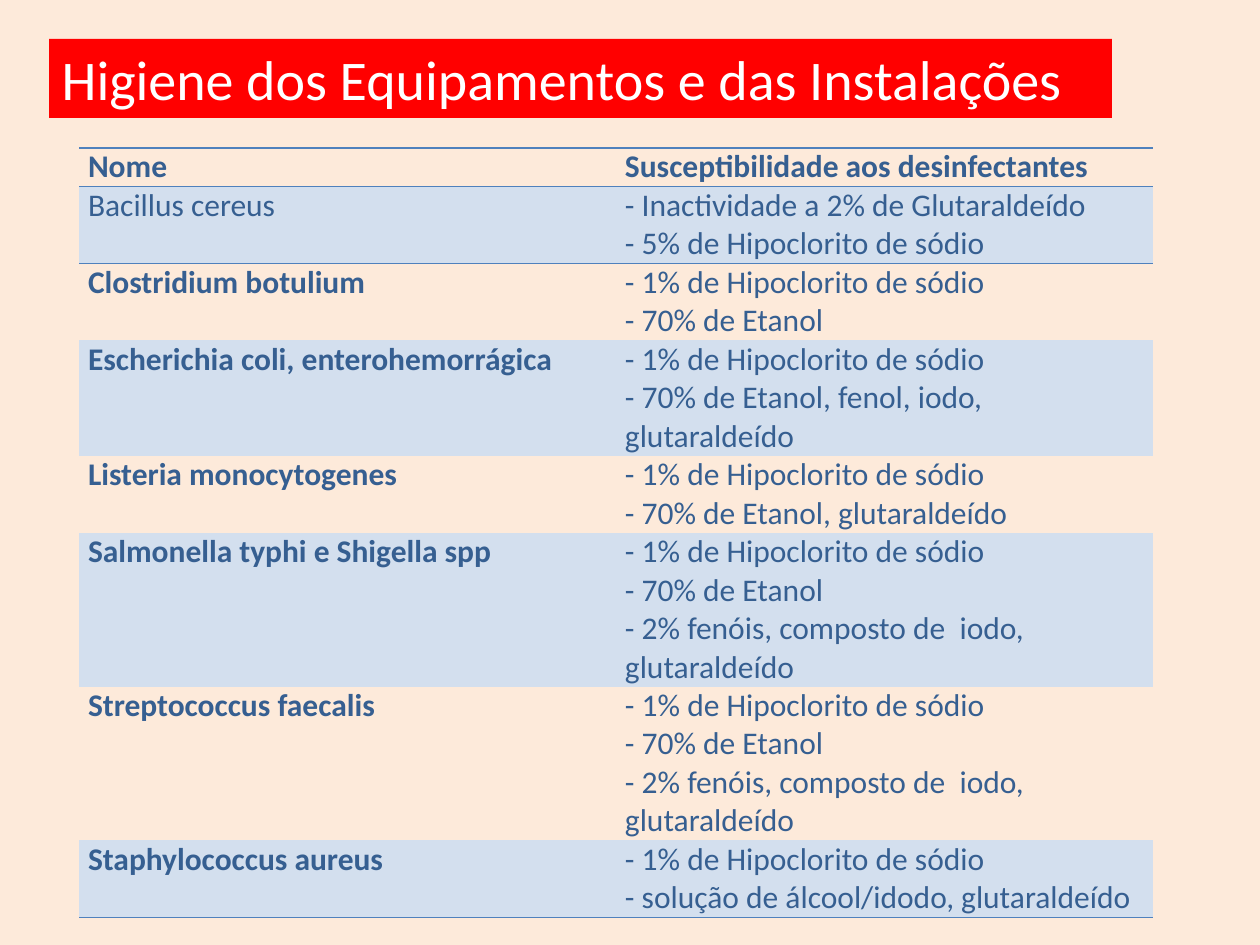
from lxml import etree
from pptx import Presentation
from pptx.dml.color import RGBColor
from pptx.enum.text import MSO_ANCHOR, MSO_AUTO_SIZE, PP_ALIGN
from pptx.oxml.ns import qn
from pptx.util import Emu, Pt

MIDDLE, NO_AUTOFIT, LEFT = MSO_ANCHOR.MIDDLE, MSO_AUTO_SIZE.NONE, PP_ALIGN.LEFT
PX = 914400 / 126
FONT = "Calibri"
BACKGROUND, RED, WHITE = "FDEADA", "FF0000", "FFFFFF"
TEXT, BAND, RULE = "365F91", "D3DFEE", "4F81BD"
NO_STYLE = "{2D5ABB26-0587-4C30-8999-92F81FD0307C}"

TITLE = "Higiene dos Equipamentos e das Instalações"
BLEACH = "- 1% de Hipoclorito de sódio"
ETHANOL = "- 70% de Etanol"
PHENOLS = "- 2% fenóis, composto de  iodo, glutaraldeído"
ROWS = [
    ("Nome", ["Susceptibilidade aos desinfectantes"]),
    ("Bacillus cereus", ["- Inactividade a 2% de Glutaraldeído",
                         "- 5% de Hipoclorito de sódio"]),
    ("Clostridium botulium", [BLEACH, ETHANOL]),
    ("Escherichia coli, enterohemorrágica",
     [BLEACH, "- 70% de Etanol, fenol, iodo, glutaraldeído"]),
    ("Listeria monocytogenes", [BLEACH, "- 70% de Etanol, glutaraldeído"]),
    ("Salmonella typhi e Shigella spp", [BLEACH, ETHANOL, PHENOLS]),
    ("Streptococcus faecalis", [BLEACH, ETHANOL, PHENOLS]),
    ("Staphylococcus aureus",
     [BLEACH, "- solução de álcool/idodo, glutaraldeído"]),
]
TITLE_BOX = (49, 39, 1063, 79)
TABLE_LEFT, TABLE_TOP, COLUMN_WIDTH, LINE_HEIGHT = 79, 148, 537, 38
CELL_INSET = 9


def px(value):
    return Emu(round(value * PX))


def color(value):
    return RGBColor.from_string(value)


def fill(target, value):
    target.fill.solid()
    target.fill.fore_color.rgb = color(value)


def add_run(paragraph, text, size, value, bold=False):
    run = paragraph.add_run()
    run.text = text
    run.font.name = FONT
    run.font.size = Pt(size)
    run.font.bold = bold
    run.font.color.rgb = color(value)


def add_borders(cell, sides):
    properties = cell._tc.get_or_add_tcPr()
    for index, side in enumerate(sides):
        line = etree.Element(qn("a:" + side), w=str(Pt(1)))
        solid = etree.SubElement(line, qn("a:solidFill"))
        etree.SubElement(solid, qn("a:srgbClr"), val=RULE)
        properties.insert(index, line)


def add_title(slide):
    title = slide.shapes.title
    title.left, title.top, title.width, title.height = map(px, TITLE_BOX)
    fill(title, RED)
    frame = title.text_frame
    frame.word_wrap = True
    frame.auto_size = NO_AUTOFIT
    frame.vertical_anchor = MIDDLE
    paragraph = frame.paragraphs[0]
    paragraph.alignment = LEFT
    paragraph.space_before = Pt(6.4)
    add_run(paragraph, TITLE, 32, WHITE)


def fill_cell(cell, lines, bold, banded):
    cell.margin_left = cell.margin_right = px(CELL_INSET)
    cell.margin_top = cell.margin_bottom = 0
    if banded:
        fill(cell, BAND)
    else:
        cell.fill.background()
    frame = cell.text_frame
    for index, text in enumerate(lines):
        paragraph = frame.add_paragraph() if index else frame.paragraphs[0]
        add_run(paragraph, text, 18, TEXT, bold)


def add_hygiene_table(slide):
    heights = [LINE_HEIGHT * len(lines) for _, lines in ROWS]
    table = slide.shapes.add_table(
        len(ROWS), 2, px(TABLE_LEFT), px(TABLE_TOP),
        px(2 * COLUMN_WIDTH), px(sum(heights))).table
    table.first_row = table.horz_banding = False
    table._tbl.tblPr.find(qn("a:tableStyleId")).text = NO_STYLE
    for column in table.columns:
        column.width = px(COLUMN_WIDTH)
    borders = {0: ["lnT", "lnB"], 1: ["lnT"], len(ROWS) - 1: ["lnB"]}
    for index, (name, lines) in enumerate(ROWS):
        table.rows[index].height = px(heights[index])
        for column, content in enumerate(([name], lines)):
            cell = table.cell(index, column)
            bold = index == 0 or (column == 0 and index > 1)
            fill_cell(cell, content, bold, index % 2 == 1)
            add_borders(cell, borders.get(index, []))


def main():
    presentation = Presentation()
    presentation.slide_width, presentation.slide_height = px(1260), px(945)
    slide = presentation.slides.add_slide(presentation.slide_layouts[5])
    fill(slide.background, BACKGROUND)
    add_hygiene_table(slide)
    add_title(slide)
    presentation.save("out.pptx")


if __name__ == "__main__":
    main()
